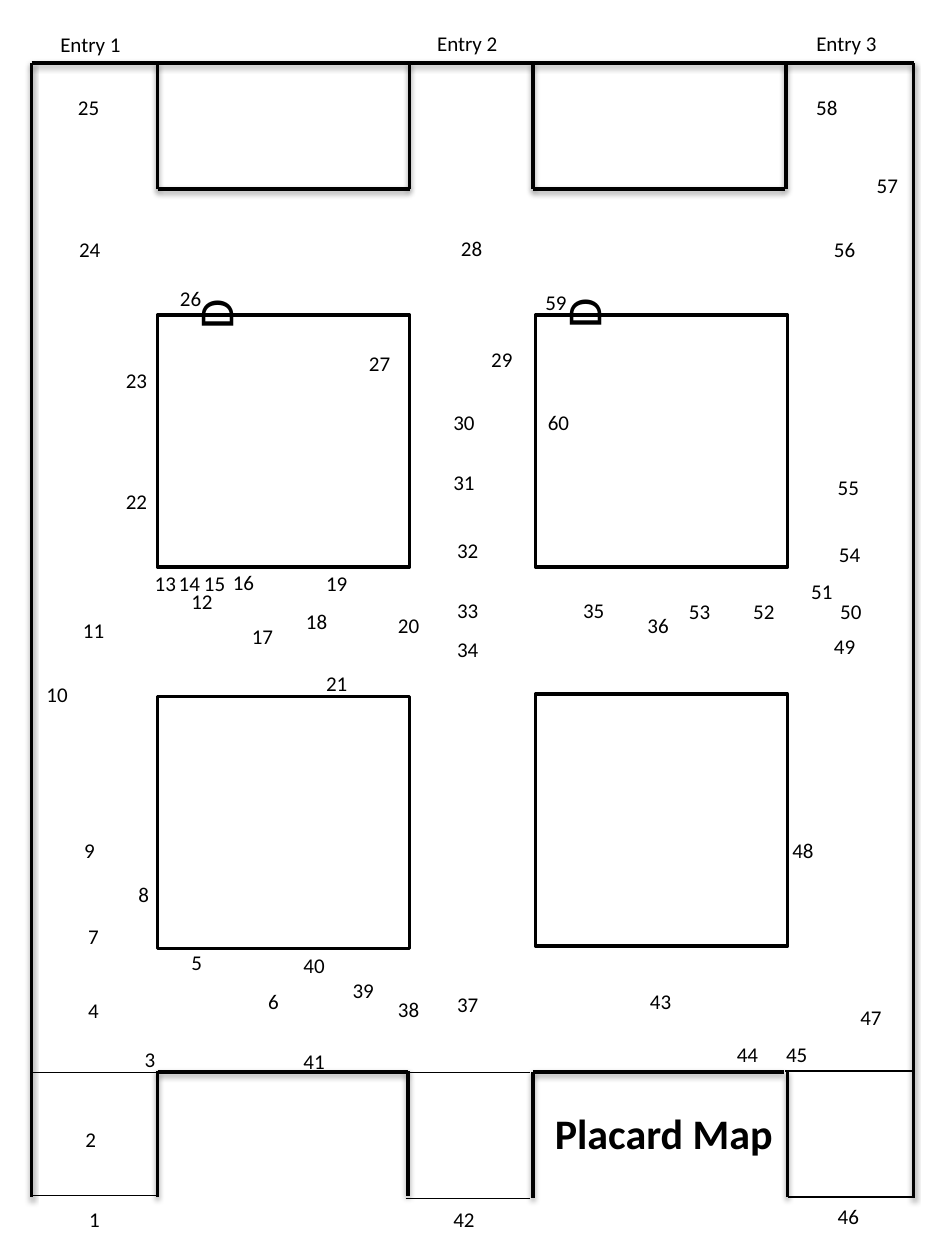
from lxml.etree import SubElement
from pptx import Presentation
from pptx.dml.color import RGBColor
from pptx.enum.shapes import MSO_CONNECTOR, MSO_SHAPE
from pptx.enum.text import MSO_AUTO_SIZE
from pptx.oxml.ns import qn
from pptx.util import Cm, Pt

COLORS = {"ink": "000000", "paper": "FFFFFF"}
FONT = "Calibri"
GRID = 2.54  # centimetres in one square of the floor plan

# All places below are in grid squares: left, top or x1, y1, x2, y2.
ROOM_SIZE = 2
ROOMS = [(1.25, 2.5), (4.25, 2.5), (1.25, 5.53), (4.25, 5.51)]
WALLS = [
    # outer sides and top
    (0.25, 9.5, 0.25, 0.5), (7.25, 9.5, 7.25, 0.5), (0.25, 0.5, 7.25, 0.5),
    # upper alcoves
    (1.25, 1.5, 3.25, 1.5), (4.23, 1.5, 6.23, 1.5),
    (1.25, 1.5, 1.25, 0.5), (3.25, 1.5, 3.25, 0.5),
    (4.23, 1.5, 4.23, 0.5), (6.24, 1.5, 6.24, 0.5),
    # lower alcoves
    (1.25, 8.51, 3.24, 8.51), (4.23, 8.51, 6.22, 8.51),
    (1.25, 8.5, 1.25, 9.5), (3.24, 8.5, 3.24, 9.49),
    (4.23, 8.51, 4.23, 9.51), (6.25, 8.5, 6.25, 9.5),
]
THRESHOLDS = [
    (6.25, 9.5, 7.26, 9.5), (6.23, 8.5, 7.24, 8.5),
    (0.25, 9.49, 1.24, 9.49), (0.26, 8.51, 1.25, 8.51),
    (3.22, 9.51, 4.21, 9.51), (3.22, 8.51, 4.21, 8.51),
]
TITLE = (" Placard Map", 4.23, 8.74)
ENTRIES = [("Entry 1", 0.38, 0.2), ("Entry 2", 3.37, 0.19), ("Entry 3", 6.38, 0.19)]
DOORS = [(4.4, 2.2), (1.48, 2.21)]
# Placards 1 to 60, in order
PLACARDS = [
    (0.61, 9.53), (0.58, 8.89), (1.05, 8.26), (0.6, 7.87), (1.42, 7.49),
    (2.03, 7.8), (0.6, 7.28), (1, 6.95), (0.57, 6.6), (0.27, 5.36),
    (0.56, 4.85), (1.42, 4.62), (1.13, 4.48), (1.32, 4.48), (1.52, 4.48),
    (1.75, 4.47), (1.9, 4.9), (2.33, 4.78), (2.49, 4.48), (3.06, 4.81),
    (2.49, 5.27), (0.9, 3.83), (0.9, 2.87), (0.53, 1.83), (0.52, 0.7),
    (1.33, 2.22), (2.83, 2.73), (3.56, 1.82), (3.8, 2.7), (3.5, 3.2),
    (3.5, 3.68), (3.53, 4.22), (3.53, 4.69), (3.53, 5), (4.53, 4.69),
    (5.04, 4.81), (3.53, 7.82), (3.06, 7.86), (2.7, 7.71), (2.31, 7.51),
    (2.31, 8.27), (3.5, 9.53), (5.06, 7.8), (5.75, 8.22), (6.14, 8.22),
    (6.55, 9.5), (6.73, 7.92), (6.19, 6.6), (6.52, 4.98), (6.57, 4.7),
    (6.34, 4.54), (5.88, 4.7), (5.37, 4.7), (6.56, 4.25), (6.55, 3.72),
    (6.52, 1.83), (6.86, 1.32), (6.38, 0.7), (4.23, 2.25), (4.25, 3.2),
]


def on_grid(*squares):
    return [Cm(square * GRID) for square in squares]


def color(name):
    return RGBColor.from_string(COLORS[name])


def add_label(slide, text, left, top, width, height=0.3, size=12, bold=False, rotation=0):
    label = slide.shapes.add_textbox(*on_grid(left, top, width, height))
    label.rotation = rotation
    frame = label.text_frame
    frame.word_wrap = False
    frame.auto_size = MSO_AUTO_SIZE.SHAPE_TO_FIT_TEXT
    run = frame.paragraphs[0].add_run()
    run.text = text
    run.font.name = FONT
    run.font.size = Pt(size)
    run.font.bold = bold
    run.font.color.rgb = color("ink")


def add_room(slide, left, top):
    room = slide.shapes.add_shape(
        MSO_SHAPE.RECTANGLE, *on_grid(left, top, ROOM_SIZE, ROOM_SIZE))
    room.shadow.inherit = False
    room.fill.solid()
    room.fill.fore_color.rgb = color("paper")
    room.line.color.rgb = color("ink")
    room.line.width = Pt(2)


def add_line(slide, ends, width, shadow):
    line = slide.shapes.add_connector(MSO_CONNECTOR.STRAIGHT, *on_grid(*ends))
    line.line.color.rgb = color("ink")
    line.line.width = Pt(width)
    effects = SubElement(line._element.spPr, qn("a:effectLst"))
    if shadow:
        outer = SubElement(effects, qn("a:outerShdw"), blurRad="40000",
                           dist="20000", dir="5400000", rotWithShape="0")
        tint = SubElement(outer, qn("a:srgbClr"), val=COLORS["ink"])
        SubElement(tint, qn("a:alpha"), val="38000")


def main():
    deck = Presentation()
    deck.slide_width, deck.slide_height = on_grid(7.5, 10)
    slide = deck.slides.add_slide(deck.slide_layouts[6])

    for place in ROOMS:
        add_room(slide, *place)
    for ends in WALLS:
        add_line(slide, ends, width=2, shadow=True)
    for ends in THRESHOLDS:
        add_line(slide, ends, width=0.75, shadow=False)

    add_label(slide, *TITLE, width=2.02, height=0.5, size=24, bold=True)
    for entry in ENTRIES:
        add_label(slide, *entry, width=0.69)
    for place in DOORS:
        add_label(slide, "D", *place, width=0.44, height=0.57, size=28, rotation=270)
    for number, place in enumerate(PLACARDS, start=1):
        add_label(slide, str(number), *place, width=0.29 if number < 10 else 0.37)

    deck.save("out.pptx")


if __name__ == "__main__":
    main()
